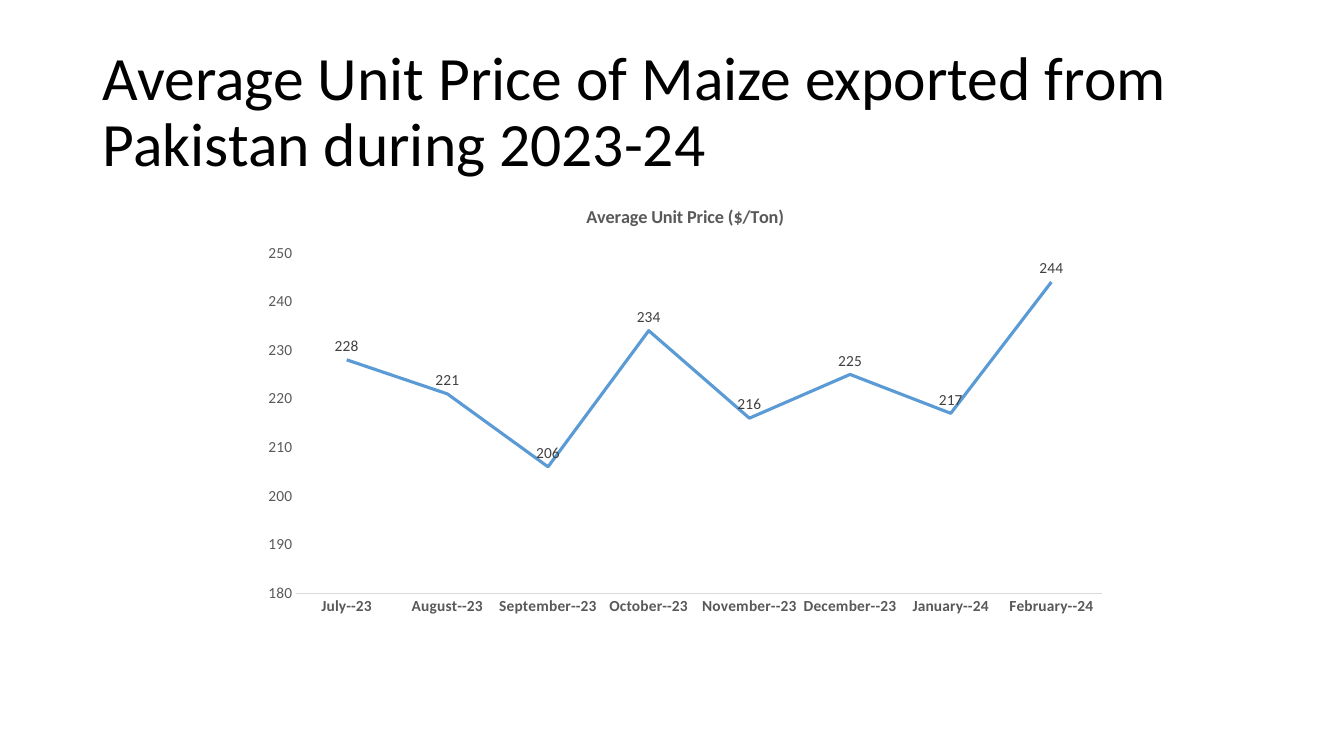
from pptx import Presentation
from pptx.chart.data import CategoryChartData
from pptx.dml.color import RGBColor
from pptx.enum.chart import XL_CHART_TYPE as ChartType, XL_LABEL_POSITION as LabelPos
from pptx.enum.chart import XL_MARKER_STYLE as Marker, XL_TICK_MARK as Tick
from pptx.enum.text import MSO_ANCHOR as Anchor
from pptx.util import Inches, Pt

FONT = "Calibri"
COLORS = {"title": "000000", "axis": "595959", "label": "404040",
          "series": "5B9BD5", "rule": "D9D9D9"}
PRICES = {"July--23": 228, "August--23": 221, "September--23": 206,
          "October--23": 234, "November--23": 216, "December--23": 225,
          "January--24": 217, "February--24": 244}


def rgb(name):
    return RGBColor.from_string(COLORS[name])


def style_font(font, size, color, bold=False):
    font.name = FONT
    font.size = Pt(size)
    font.bold = bold
    font.color.rgb = rgb(color)


def style_line(line, color, width):
    line.color.rgb = rgb(color)
    line.width = Pt(width)


def add_title(s, text):
    tf = s.shapes.add_textbox(Inches(0.92), Inches(0.4), Inches(11.5), Inches(1.45)).text_frame
    tf.word_wrap = True
    tf.vertical_anchor = Anchor.MIDDLE
    p = tf.paragraphs[0]
    p.text = text
    p.line_spacing = 0.9
    style_font(p.font, 44, "title")


def style_axis(axis, bold=False):
    axis.has_major_gridlines = False
    axis.major_tick_mark = axis.minor_tick_mark = Tick.NONE
    style_font(axis.tick_labels.font, 11, "axis", bold)


def add_price_chart(s, title, prices):
    data = CategoryChartData()
    data.categories = list(prices)
    data.add_series(title, list(prices.values()))
    chart = s.shapes.add_chart(ChartType.LINE, Inches(2.49), Inches(1.86),
                               Inches(8.61), Inches(4.34), data).chart
    style_font(chart.font, 11, "title")
    chart.has_legend = False
    chart.has_title = True
    p = chart.chart_title.text_frame.paragraphs[0]
    p.text = title
    style_font(p.font, 13, "axis", True)

    style_axis(chart.category_axis, True)
    style_line(chart.category_axis.format.line, "rule", 0.75)
    style_axis(chart.value_axis)
    chart.value_axis.format.line.fill.background()
    chart.value_axis.minimum_scale = 180
    chart.value_axis.maximum_scale = 250
    chart.value_axis.major_unit = 10

    plot = chart.plots[0]
    plot.vary_by_categories = False
    series = plot.series[0]
    series.smooth = False
    series.marker.style = Marker.NONE
    style_line(series.format.line, "series", 2.25)
    labels = series.data_labels
    labels.show_value = True
    labels.position = LabelPos.ABOVE
    style_font(labels.font, 11, "label")


def main():
    prs = Presentation()
    prs.slide_width, prs.slide_height = Inches(13.33), Inches(7.5)
    s = prs.slides.add_slide(prs.slide_layouts[6])
    add_title(s, "Average Unit Price of Maize exported from Pakistan during 2023-24")
    add_price_chart(s, "Average Unit Price ($/Ton)", PRICES)
    prs.save("out.pptx")


if __name__ == "__main__":
    main()
